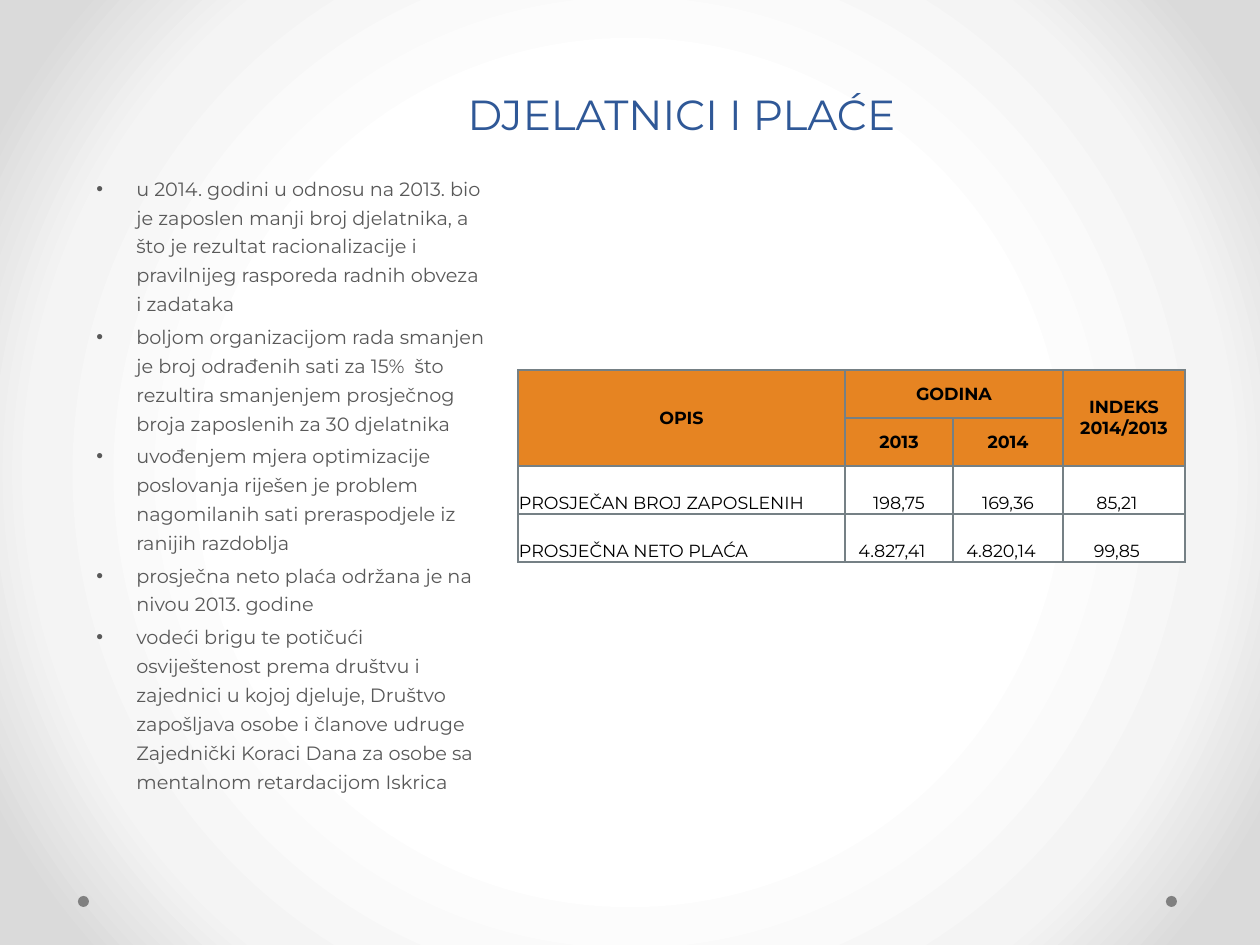
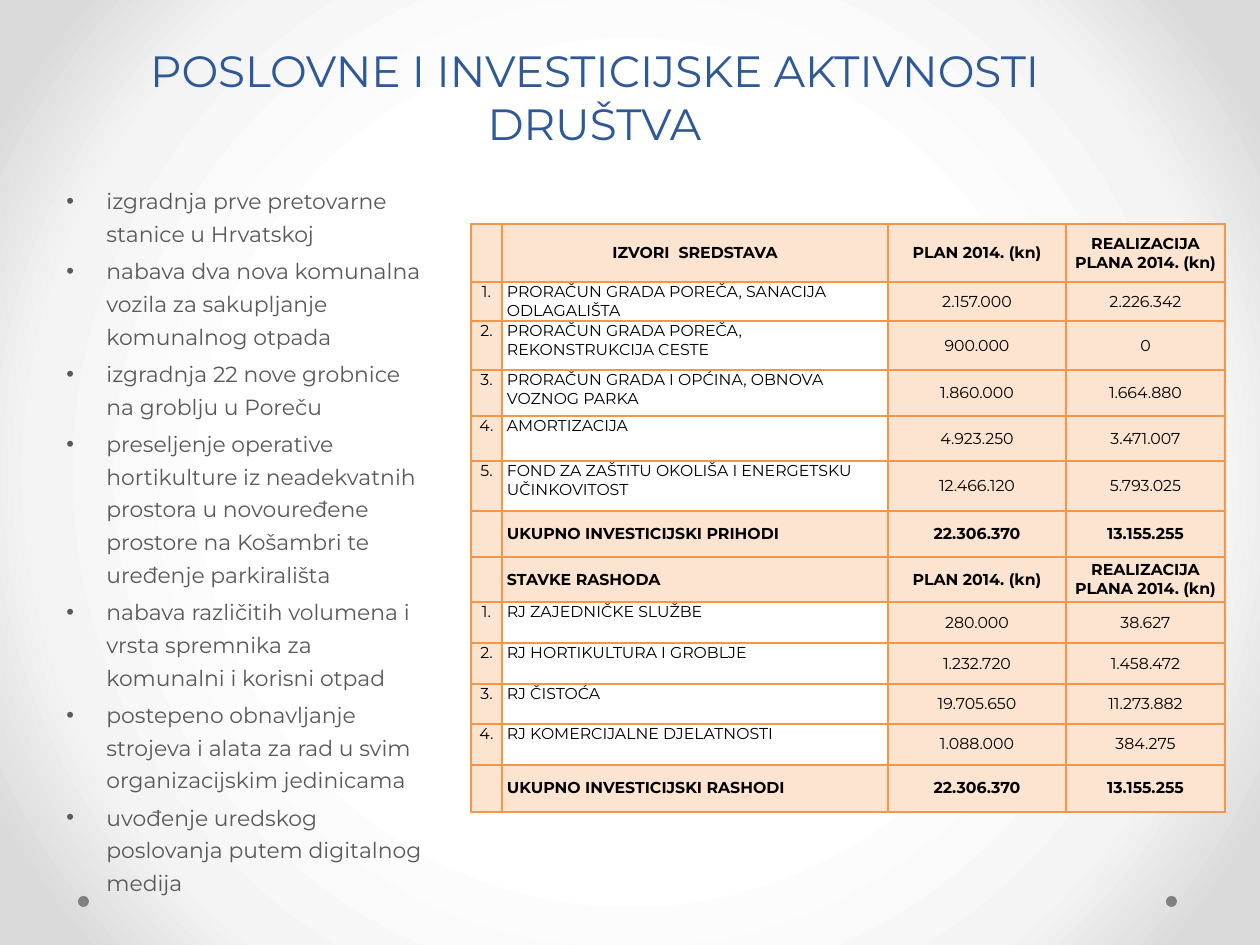
import lxml.etree
import pptx
import pptx.dml.color
import pptx.enum.shapes
import pptx.enum.text
import pptx.oxml.ns
import pptx.util
from dataclasses import dataclass

# ---- Content ----
STAFF_TITLE = "DJELATNICI I PLAĆE"
STAFF_POINTS = [
    "u 2014. godini u odnosu na 2013. bio je zaposlen manji broj djelatnika, a što je "
    "rezultat racionalizacije i pravilnijeg rasporeda radnih obveza i zadataka",
    "boljom organizacijom rada smanjen je broj odrađenih sati za 15%  što rezultira "
    "smanjenjem prosječnog broja zaposlenih za 30 djelatnika",
    "uvođenjem mjera optimizacije poslovanja riješen je problem nagomilanih sati "
    "preraspodjele iz ranijih razdoblja",
    "prosječna neto plaća održana je na nivou 2013. godine",
    "vodeći brigu te potičući osviještenost prema društvu i zajednici u kojoj djeluje, "
    "Društvo zapošljava osobe i članove udruge Zajednički Koraci Dana za osobe sa "
    "mentalnom retardacijom Iskrica",
]
STAFF_ROWS = [
    ("OPIS", "GODINA", "", "INDEKS 2014/2013"),
    ("", "2013", "2014", ""),
    ("PROSJEČAN BROJ ZAPOSLENIH", "198,75", "169,36", "85,21"),
    ("PROSJEČNA NETO PLAĆA", "4.827,41", "4.820,14", "99,85"),
]
STAFF_MERGES = [((0, 0), (1, 0)), ((0, 1), (0, 2)), ((0, 3), (1, 3))]
STAFF_SHIFTED_LEFT = {(2, 3), (3, 1), (3, 2), (3, 3)}

INVESTMENT_TITLE = "POSLOVNE I INVESTICIJSKE AKTIVNOSTI DRUŠTVA"
INVESTMENT_POINTS = [
    "izgradnja prve pretovarne stanice u Hrvatskoj",
    "nabava dva nova komunalna vozila za sakupljanje komunalnog otpada",
    "izgradnja 22 nove grobnice na groblju u Poreču",
    "preseljenje operative hortikulture iz neadekvatnih prostora u novouređene prostore "
    "na Košambri te uređenje parkirališta",
    "nabava različitih volumena i vrsta spremnika za komunalni i korisni otpad",
    "postepeno obnavljanje strojeva i alata za rad u svim organizacijskim jedinicama",
    "uvođenje uredskog poslovanja putem digitalnog medija",
]
AMOUNT_HEADS = ("PLAN 2014. (kn)", "REALIZACIJA PLANA 2014. (kn)")
# Rows without a number are headings or totals
INVESTMENT_ROWS = [
    ("", "IZVORI  SREDSTAVA", *AMOUNT_HEADS),
    ("1.", "PRORAČUN GRADA POREČA, SANACIJA ODLAGALIŠTA", "2.157.000", "2.226.342"),
    ("2.", "PRORAČUN GRADA POREČA, REKONSTRUKCIJA CESTE", "900.000", "0"),
    ("3.", "PRORAČUN GRADA I OPĆINA, OBNOVA VOZNOG PARKA", "1.860.000", "1.664.880"),
    ("4.", "AMORTIZACIJA", "4.923.250", "3.471.007"),
    ("5.", "FOND ZA ZAŠTITU OKOLIŠA I ENERGETSKU UČINKOVITOST", "12.466.120", "5.793.025"),
    ("", "UKUPNO INVESTICIJSKI PRIHODI", "22.306.370", "13.155.255"),
    ("", "STAVKE RASHODA", *AMOUNT_HEADS),
    ("1.", "RJ ZAJEDNIČKE SLUŽBE", "280.000", "38.627"),
    ("2.", "RJ HORTIKULTURA I GROBLJE", "1.232.720", "1.458.472"),
    ("3.", "RJ ČISTOĆA", "19.705.650", "11.273.882"),
    ("4.", "RJ KOMERCIJALNE DJELATNOSTI", "1.088.000", "384.275"),
    ("", "UKUPNO INVESTICIJSKI RASHODI", "22.306.370", "13.155.255"),
]

# ---- Layout, in px ----
PX_PER_INCH = 126
PAGE_SIZE = (1260, 945)
DOTS = [(78, 896, 11, 11), (1166, 896, 11, 11)]
BULLET_INDENT = 40
SHIFT = 14
STAFF_TABLE_AT = (518, 370)
STAFF_COLUMNS = [327, 108, 110, 122]
STAFF_ROW_HEIGHTS = [48] * len(STAFF_ROWS)
INVESTMENT_TABLE_AT = (471, 224)
INVESTMENT_COLUMNS = [31, 386, 178, 159]
INVESTMENT_ROW_HEIGHTS = [58, 39, 49, 46, 45, 50, 46, 45, 41, 41, 40, 41, 47]


@dataclass(frozen=True)
class Theme:
    font: str = "Montserrat"
    title: str = "2F5897"
    body: str = "595959"
    table_text: str = "000000"
    white: str = "FFFFFF"
    dot: str = "808080"
    orange: str = "E68422"
    grey_line: str = "758085"
    peach: str = "FDE4D0"
    orange_line: str = "F79646"
    backdrop: tuple = ((50, "FFFFFF"), (76, "F4F4F4"), (92, "DADADA"))
    staff_title_size: float = 24
    staff_body_size: float = 11
    staff_table_size: float = 10
    investment_title_size: float = 25
    investment_body_size: float = 12.5
    investment_table_size: float = 9


THEME = Theme()
ALIGN = pptx.enum.text.PP_ALIGN
ANCHOR = pptx.enum.text.MSO_ANCHOR


# ---- Helpers ----
def px(length):
    return pptx.util.Emu(round(length * 914400 / PX_PER_INCH))


def rgb(color):
    return pptx.dml.color.RGBColor.from_string(color)


def add_node(parent, tag, **attributes):
    names = {name: str(value) for name, value in attributes.items()}
    return lxml.etree.SubElement(parent, pptx.oxml.ns.qn(tag), names)


def style_text(para, size, color, bold=False, align=ALIGN.LEFT):
    para.alignment = align
    for span in para.runs:
        span.font.name = THEME.font
        span.font.size = pptx.util.Pt(size)
        span.font.bold = bold
        span.font.color.rgb = rgb(color)


def paint_backdrop(master):
    master.background.fill.gradient()
    gradient = next(master.element.iter(pptx.oxml.ns.qn("a:gradFill")))
    for child in list(gradient):
        gradient.remove(child)
    stops = add_node(gradient, "a:gsLst")
    for percent, color in THEME.backdrop:
        add_node(add_node(stops, "a:gs", pos=percent * 1000), "a:srgbClr", val=color)
    circle = add_node(gradient, "a:path", path="circle")
    add_node(circle, "a:fillToRect", l=50000, t=50000, r=50000, b=50000)


def add_text_box(page, area, anchor):
    box = page.shapes.add_textbox(*map(px, area))
    frame = box.text_frame
    frame.word_wrap = True
    frame.vertical_anchor = anchor
    return frame


def add_bullets(page, area, points, size):
    frame = add_text_box(page, area, ANCHOR.TOP)
    frame.text = "\n".join(points)
    for para in frame.paragraphs:
        style_text(para, size, THEME.body)
        para.line_spacing = 1.25
        para.space_before = pptx.util.Pt(size * 0.2)
        properties = para._p.get_or_add_pPr()
        properties.set("marL", str(px(BULLET_INDENT)))
        properties.set("indent", str(-px(BULLET_INDENT)))
        add_node(properties, "a:buFont", typeface="Arial")
        add_node(properties, "a:buChar", char="•")


def add_page(deck, title, title_area, title_size, points, body_area, body_size):
    page = deck.slides.add_slide(deck.slide_layouts[6])
    for area in DOTS:
        dot = page.shapes.add_shape(pptx.enum.shapes.MSO_SHAPE.OVAL, *map(px, area))
        dot.shadow.inherit = False
        dot.fill.solid()
        dot.fill.fore_color.rgb = rgb(THEME.dot)
        dot.line.fill.background()
    frame = add_text_box(page, title_area, ANCHOR.BOTTOM)
    frame.text = title
    style_text(frame.paragraphs[0], title_size, THEME.title, align=ALIGN.CENTER)
    add_bullets(page, body_area, points, body_size)
    return page


def add_borders(cell, color):
    properties = cell._tc.get_or_add_tcPr()
    for index, side in enumerate(("a:lnL", "a:lnR", "a:lnT", "a:lnB")):
        line = add_node(properties, side, w=pptx.util.Pt(1))
        add_node(add_node(line, "a:solidFill"), "a:srgbClr", val=color)
        properties.insert(index, line)


def add_grid(page, corner, columns, heights, rows, size, line_color, inset, cell_style):
    """cell_style(row, column) gives fill, bold, align, anchor and extra right inset."""
    shape = page.shapes.add_table(len(rows), len(columns), *map(px, corner),
                                  px(sum(columns)), px(sum(heights)))
    table = shape.table
    table.first_row = table.horz_banding = False
    for column, width in zip(table.columns, columns):
        column.width = px(width)
    for row, height in zip(table.rows, heights):
        row.height = px(height)
    for row_index, row in enumerate(rows):
        for column_index, text in enumerate(row):
            fill, bold, align, anchor, extra = cell_style(row_index, column_index)
            cell = table.cell(row_index, column_index)
            cell.margin_left, cell.margin_right = px(inset), px(inset + extra)
            cell.margin_top = cell.margin_bottom = 0
            cell.vertical_anchor = anchor
            cell.fill.solid()
            cell.fill.fore_color.rgb = rgb(fill)
            add_borders(cell, line_color)
            para = cell.text_frame.paragraphs[0]
            para.text = text
            para.font.size = pptx.util.Pt(size)
            style_text(para, size, THEME.table_text, bold, align)
    return table


# ---- Cell rules ----
def staff_cell(row, column):
    if row < 2:
        return THEME.orange, True, ALIGN.CENTER, ANCHOR.MIDDLE, 0
    align = ALIGN.CENTER if column else ALIGN.LEFT
    extra = SHIFT if (row, column) in STAFF_SHIFTED_LEFT else 0
    return THEME.white, False, align, ANCHOR.BOTTOM, extra


def investment_cell(row, column):
    is_item = bool(INVESTMENT_ROWS[row][0])
    is_label = column == 1
    fill = THEME.white if is_item and is_label else THEME.peach
    align = ALIGN.LEFT if is_label and row else ALIGN.CENTER
    anchor = ANCHOR.TOP if is_item and column < 2 else ANCHOR.MIDDLE
    return fill, not is_item, align, anchor, 0


# ---- Deck ----
def main():
    deck = pptx.Presentation()
    deck.slide_width, deck.slide_height = map(px, PAGE_SIZE)
    paint_backdrop(deck.slide_master)

    # Staff and wages
    page = add_page(deck, STAFF_TITLE, (134, 37, 1095, 108), THEME.staff_title_size,
                    STAFF_POINTS, (84, 165, 415, 714), THEME.staff_body_size)
    table = add_grid(page, STAFF_TABLE_AT, STAFF_COLUMNS, STAFF_ROW_HEIGHTS, STAFF_ROWS,
                     THEME.staff_table_size, THEME.grey_line, 1, staff_cell)
    for first, last in STAFF_MERGES:
        table.cell(*first).merge(table.cell(*last))

    # Investments
    page = add_page(deck, INVESTMENT_TITLE, (63, 38, 1063, 117),
                    THEME.investment_title_size, INVESTMENT_POINTS,
                    (54, 175, 387, 725), THEME.investment_body_size)
    add_grid(page, INVESTMENT_TABLE_AT, INVESTMENT_COLUMNS, INVESTMENT_ROW_HEIGHTS,
             INVESTMENT_ROWS, THEME.investment_table_size, THEME.orange_line, 5,
             investment_cell)

    deck.save("out.pptx")


if __name__ == "__main__":
    main()
